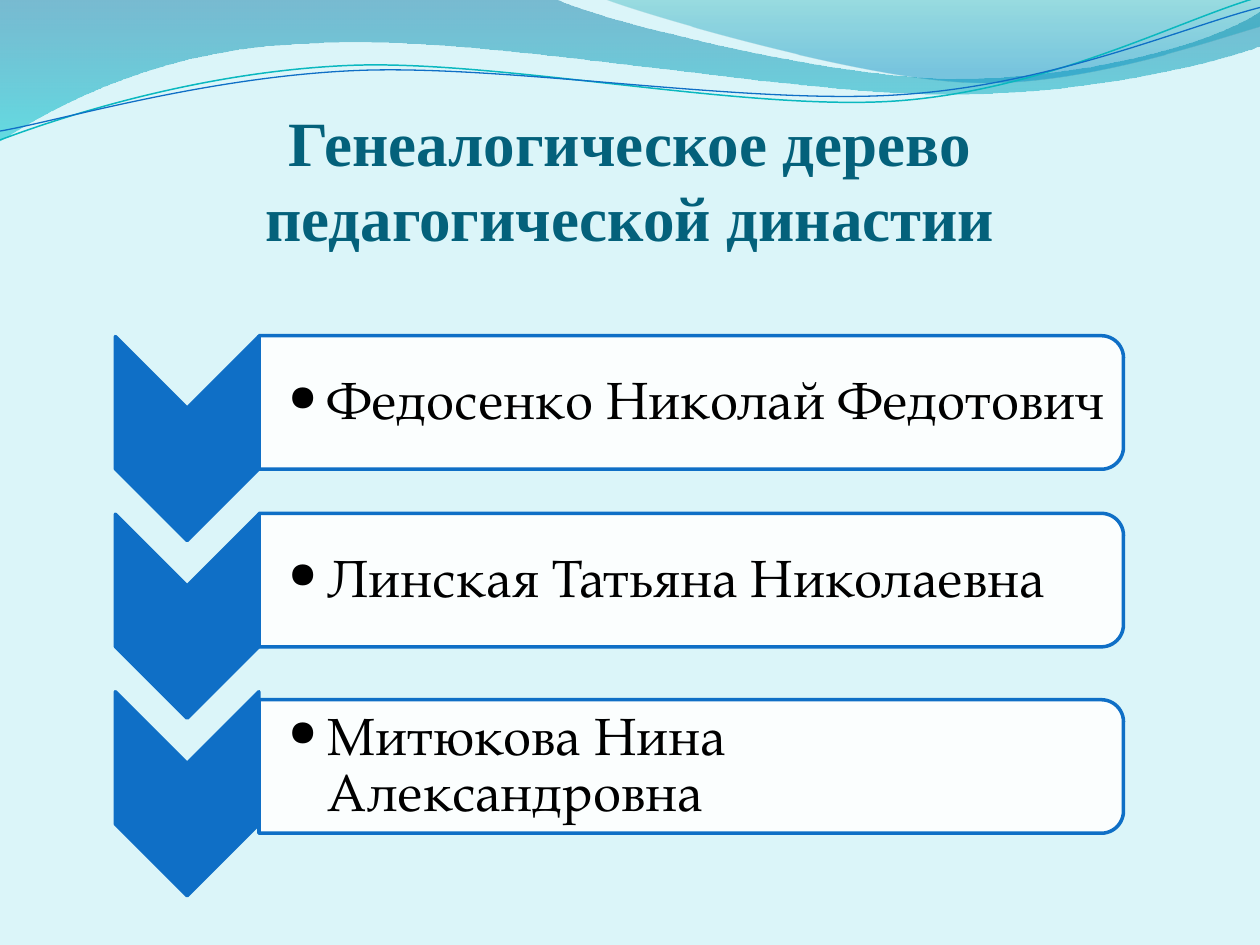
import math

from lxml import etree
from pptx import Presentation
from pptx.dml.color import RGBColor
from pptx.enum import shapes, text
from pptx.oxml.ns import qn
from pptx.util import Pt

COLORS = {
    "background": "DBF5F9", "title": "04617B", "name": "000000",
    "accent": "0F6FC6", "panel": "FFFFFF", "teal_line": "0AB8BF",
    "deep_blue": "0074A1", "cyan": "00C6CF", "teal": "00A1A9", "blue": "008BBF",
}
TITLE = "Генеалогическое дерево педагогической династии"
NAMES = [
    ("Федосенко Николай Федотович", 0),
    ("Линская Татьяна Николаевна", 0),
    ("Митюкова Нина Александровна", 5),
]
WAVES = [
    {"start": (0, 0),
     "segments": [
         [(317, -0.7)],
         [(343, 12), (478, 45), (546, 45)],
         [(614, 45), (690, 27), (720, 6.5)],
         [(720.7, 26)],
         [(708, 32), (626, 55), (537, 54)],
         [(448, 54), (275, 20), (185, 24.5)],
         [(93, 26), (33, 60), (-0.7, 81)]],
     "stops": [(0, "deep_blue", 45), (1, "cyan", 55)]},
    {"start": (345, -0.7),
     "segments": [
         [(366.5, 8), (491, 44.6), (553.7, 46.8)],
         [(616.3, 49.7), (692, 23), (720, 15)],
         [(720, 0)]],
     "stops": [(0, "teal", 30), (0.8, "blue", 45)]},
    {"start": (0, 80),
     "segments": [
         [(34.5, 67), (113.8, 41), (199.4, 37.4)],
         [(284.4, 33.8), (427, 64), (513.4, 57.6)],
         [(599.8, 51.1), (675.4, 10.8), (718.6, -1.4)]],
     "line": ("teal_line", 0.85), "center": (359.3, 41.4)},
    {"start": (0, 74.9),
     "segments": [
         [(33.8, 69.1), (118, 43.9), (203.8, 40.3)],
         [(290.2, 36.7), (429.8, 60.5), (516.2, 54)],
         [(602, 48.2), (677.5, 15.1), (720, 4.3)]],
     "line": ("accent", 0.75), "center": (359.6, 42.5)},
]
LINE_TILT = 2.7
ROW_PITCH = 101.5
CHEVRON = {"center": (106.9, 250.6), "size": (116.6, 82)}
PANEL = {"center": (395, 230), "size": (76.3, 494)}
NAME_BOX = {"left": 147.9, "width": 490.3, "height": 68.4}


def rgb(key):
    return RGBColor.from_string(COLORS[key])


def set_opacity(shape, percents):
    fills = shape.element.spPr.iter(qn("a:srgbClr"))
    for color, percent in zip(fills, percents):
        etree.SubElement(color, qn("a:alpha")).set("val", str(percent * 1000))


def set_line(shape, key, width):
    shape.line.color.rgb = rgb(key)
    shape.line.width = Pt(width)


def turn(point, center, degrees):
    cos, sin = math.cos(math.radians(degrees)), math.sin(math.radians(degrees))
    dx, dy = point[0] - center[0], point[1] - center[1]
    return center[0] + dx * cos - dy * sin, center[1] + dx * sin + dy * cos


def bend(outline, segments):
    vertices = iter(list(outline.element.spPr.iter(qn("a:lnTo"))))
    for segment in segments:
        steps = [next(vertices) for _ in segment]
        if len(steps) == 3:
            curve = etree.Element(qn("a:cubicBezTo"))
            steps[0].addprevious(curve)
            for step in steps:
                curve.append(step[0])
                step.getparent().remove(step)


def add_wave(slide, wave):
    points = [wave["start"]] + [p for segment in wave["segments"] for p in segment]
    if "center" in wave:
        points = [turn(point, wave["center"], LINE_TILT) for point in points]
    start, *rest = [(Pt(x), Pt(y)) for x, y in points]
    builder = slide.shapes.build_freeform(*start)
    builder.add_line_segments(rest, close="stops" in wave)
    ribbon = builder.convert_to_shape()
    bend(ribbon, wave["segments"])
    ribbon.shadow.inherit = False
    if "line" in wave:
        ribbon.rotation = -LINE_TILT
        ribbon.fill.background()
        set_line(ribbon, *wave["line"])
        return
    ribbon.fill.gradient()
    ribbon.fill.gradient_angle = 270
    for stop, (position, key, _) in zip(ribbon.fill.gradient_stops, wave["stops"]):
        stop.position = position
        stop.color.rgb = rgb(key)
    set_opacity(ribbon, [opacity for _, _, opacity in wave["stops"]])
    ribbon.line.fill.background()


def add_turned(slide, kind, place, shift, fill, opacity=None):
    (x, y), (width, height) = place["center"], place["size"]
    shape = slide.shapes.add_shape(
        kind, Pt(x - width / 2), Pt(y + shift - height / 2), Pt(width), Pt(height))
    shape.rotation = 90
    shape.shadow.inherit = False
    shape.fill.solid()
    shape.fill.fore_color.rgb = rgb(fill)
    if opacity:
        set_opacity(shape, [opacity])
    set_line(shape, "accent", 2)


def write(paragraph, words, font, size, key, bold=False):
    run = paragraph.add_run()
    run.text = words
    run.font.name, run.font.size, run.font.bold = font, Pt(size), bold
    run.font.color.rgb = rgb(key)


def set_frame(frame, anchor, left, top, right, bottom):
    frame.word_wrap = True
    frame.auto_size = text.MSO_AUTO_SIZE.NONE
    frame.vertical_anchor = anchor
    frame.margin_left, frame.margin_top = Pt(left), Pt(top)
    frame.margin_right, frame.margin_bottom = Pt(right), Pt(bottom)


def add_name(slide, name, shift):
    height = NAME_BOX["height"]
    top = PANEL["center"][1] + shift - height / 2
    frame = slide.shapes.add_textbox(
        Pt(NAME_BOX["left"]), Pt(top), Pt(NAME_BOX["width"]), Pt(height)).text_frame
    set_frame(frame, text.MSO_ANCHOR.MIDDLE, 16.8, 1.5, 1.5, 1.5)
    paragraph = frame.paragraphs[0]
    paragraph.level = 1
    paragraph.line_spacing = 0.9
    paragraph.space_after = Pt(4.5)
    properties = paragraph._p.get_or_add_pPr()
    properties.set("marL", str(Pt(22.5)))
    properties.set("indent", str(Pt(-22.5)))
    etree.SubElement(properties, qn("a:buFont")).set("typeface", "TeX Gyre Pagella")
    etree.SubElement(properties, qn("a:buChar")).set("char", "•")
    write(paragraph, name, "TeX Gyre Pagella", 30, "name")


def add_title(slide):
    title = slide.shapes.title
    title.left, title.top, title.width, title.height = Pt(36), Pt(55.4), Pt(648), Pt(90)
    set_frame(title.text_frame, text.MSO_ANCHOR.BOTTOM, 0, 3.6, 0, 0)
    paragraph = title.text_frame.paragraphs[0]
    paragraph.alignment = text.PP_ALIGN.CENTER
    write(paragraph, TITLE, "Times New Roman", 36, "title", bold=True)
    slide.shapes.element.append(title.element)


def main():
    """Build the slide with the family tree of a teaching dynasty."""
    deck = Presentation()
    deck.slide_width, deck.slide_height = Pt(720), Pt(540)
    slide = deck.slides.add_slide(deck.slide_layouts.get_by_name("Title Only"))
    slide.background.fill.solid()
    slide.background.fill.fore_color.rgb = rgb("background")
    for wave in WAVES:
        add_wave(slide, wave)
    for row, (name, drop) in enumerate(NAMES):
        shift = row * ROW_PITCH
        add_turned(slide, shapes.MSO_SHAPE.CHEVRON, CHEVRON, shift, "accent")
        add_turned(slide, shapes.MSO_SHAPE.ROUND_2_SAME_RECTANGLE, PANEL,
                   shift + drop, "panel", 90)
        add_name(slide, name, shift + drop)
    add_title(slide)
    deck.save("out.pptx")


if __name__ == "__main__":
    main()
